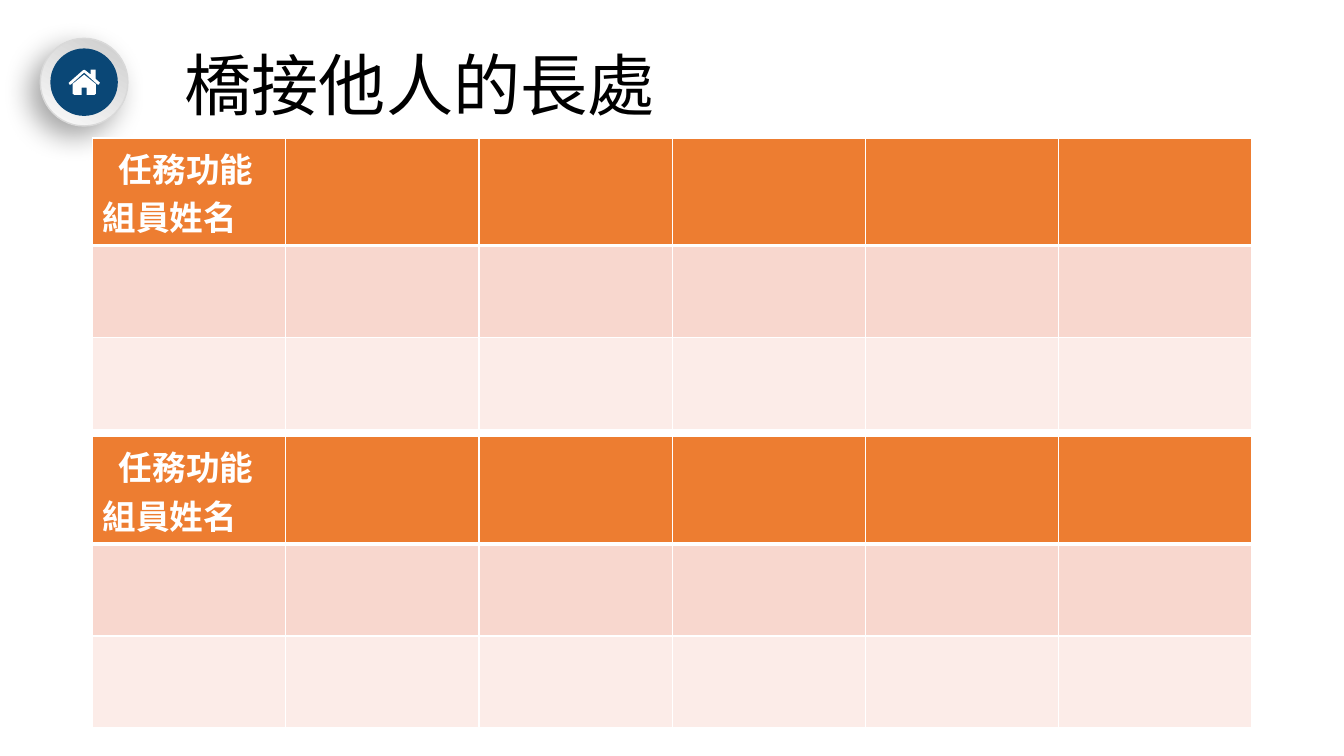
from lxml import etree
from pptx import Presentation
from pptx.dml.color import RGBColor
from pptx.enum.shapes import MSO_SHAPE
from pptx.enum.text import MSO_ANCHOR, MSO_AUTO_SIZE, PP_ALIGN
from pptx.oxml.ns import qn
from pptx.util import Pt

OVAL = MSO_SHAPE.OVAL
LEFT = PP_ALIGN.LEFT
MIDDLE = MSO_ANCHOR.MIDDLE
NO_AUTOFIT = MSO_AUTO_SIZE.NONE

FONT = "Noto Sans CJK SC"
WHITE = "FFFFFF"
ROW_FILLS = ["ED7D31", "F8D7CE", "FCECE8"]
ROW_HEIGHTS = [76.6, 65.6, 65.6]
COLUMN_COUNT = 6
HEADER_LINES = [("任務功能", 11.5), ("組員姓名", 0)]
TABLE_TOPS = [311.8, 98.6]

ROOF = [(706, 605), (698, 605), (601, 518), (505, 605), (497, 605),
        (490, 592), (590, 504), (601, 498), (612, 504), (648, 533),
        (648, 498), (683, 498), (683, 563), (713, 590)]
WALLS = [(684, 670), (676, 677), (619, 677), (619, 626), (583, 626),
         (583, 677), (530, 677), (518, 670), (518, 600), (601, 533),
         (684, 600)]


def color(value):
    """Turn a hex string into a colour."""
    return RGBColor.from_string(value)


def add_node(parent, tag, **attributes):
    """Append an XML child with the given attributes."""
    return etree.SubElement(parent, qn(tag), attributes)


class SlideBuilder:
    """Holds the style and the current slide."""

    def __init__(self, slide, font):
        """Keep the slide and the font name."""
        self.slide = slide
        self.font = font

    def add_run(self, paragraph, text, size, fill, bold=False):
        """Add one formatted run."""
        run = paragraph.add_run()
        run.text = text
        run.font.name = self.font
        run.font.size = Pt(size)
        run.font.bold = bold
        run.font.color.rgb = color(fill)
        add_node(run.font._element, "a:ea", typeface=self.font)

    def add_title(self, text, left, top, width, height):
        """Place and fill the title placeholder."""
        title = self.slide.shapes.title
        title.left, title.top = Pt(left), Pt(top)
        title.width, title.height = Pt(width), Pt(height)
        frame = title.text_frame
        frame.auto_size = NO_AUTOFIT
        frame.vertical_anchor = MIDDLE
        paragraph = frame.paragraphs[0]
        paragraph.alignment = LEFT
        paragraph.line_spacing = 0.9
        self.add_run(paragraph, text, 48, "000000")

    def add_disc(self, left, top, size):
        """Add a plain circle without a line or shadow."""
        disc = self.slide.shapes.add_shape(OVAL, Pt(left), Pt(top), Pt(size), Pt(size))
        disc.shadow.inherit = False
        disc.line.fill.background()
        return disc

    def add_ring(self, left, top, size):
        """Add the shaded circle with its soft shadow."""
        ring = self.add_disc(left, top, size)
        ring.fill.gradient()
        ring.fill.gradient_angle = 240
        for stop, value in zip(ring.fill.gradient_stops, ["CCCCCC", "FCFCFC"]):
            stop.color.rgb = color(value)
        ring.line.color.rgb = color("D9D9D9")
        ring.line.width = Pt(1)
        effects = ring._element.spPr.find(qn("a:effectLst"))
        shadow = add_node(effects, "a:outerShdw", blurRad=str(Pt(20)),
                          dist=str(Pt(10)), dir=str(136 * 60000),
                          algn="ctr", rotWithShape="0")
        shade = add_node(shadow, "a:srgbClr", val="000000")
        add_node(shade, "a:alpha", val="34000")

    def add_outline(self, contours, fill):
        """Add a freeform from closed contours in tenths of a point."""
        builder = self.slide.shapes.build_freeform(*contours[0][0], scale=Pt(0.1))
        builder.add_line_segments(contours[0][1:], close=True)
        for contour in contours[1:]:
            builder.move_to(*contour[0])
            builder.add_line_segments(contour[1:], close=True)
        shape = builder.convert_to_shape()
        shape.shadow.inherit = False
        shape.fill.solid()
        shape.fill.fore_color.rgb = color(fill)
        shape.line.fill.background()

    def format_cell(self, cell, fill, top_width, bottom_width):
        """Set the borders and fill of a cell."""
        properties = cell._tc.get_or_add_tcPr()
        widths = {"a:lnL": 1, "a:lnR": 1, "a:lnT": top_width, "a:lnB": bottom_width}
        for tag, width in widths.items():
            border = add_node(properties, tag, w=str(Pt(width)))
            add_node(add_node(border, "a:solidFill"), "a:srgbClr", val=WHITE)
        cell.fill.solid()
        cell.fill.fore_color.rgb = color(fill)

    def add_table(self, left, top, width):
        """Add a task table with its header label."""
        frame = self.slide.shapes.add_table(
            len(ROW_HEIGHTS), COLUMN_COUNT, Pt(left), Pt(top),
            Pt(width), Pt(sum(ROW_HEIGHTS)))
        table = frame.table
        for column in table.columns:
            column.width = Pt(width / COLUMN_COUNT)
        for index, row in enumerate(table.rows):
            row.height = Pt(ROW_HEIGHTS[index])
            for cell in row.cells:
                self.format_cell(cell, ROW_FILLS[index],
                                 3 if index == 1 else 1, 3 if index == 0 else 1)
        text_frame = table.cell(0, 0).text_frame
        for index, (text, indent) in enumerate(HEADER_LINES):
            paragraph = text_frame.add_paragraph() if index else text_frame.paragraphs[0]
            paragraph._p.get_or_add_pPr().set("marL", str(Pt(indent)))
            self.add_run(paragraph, text, 24, WHITE, bold=True)


def main():
    """Build and save the slide."""
    presentation = Presentation()
    presentation.slide_width, presentation.slide_height = Pt(960), Pt(540)
    slide = presentation.slides.add_slide(presentation.slide_layouts[5])
    builder = SlideBuilder(slide, FONT)
    builder.add_ring(28.8, 27.4, 62.6)
    hub = builder.add_disc(36, 34.6, 48.2)
    hub.fill.solid()
    hub.fill.fore_color.rgb = color("0A4776")
    builder.add_outline([ROOF, WALLS], WHITE)
    builder.add_title("橋接他人的長處", 124.6, 28.8, 769.7, 69.8)
    for top in TABLE_TOPS:
        builder.add_table(66.2, top, 828)
    presentation.save("out.pptx")


if __name__ == "__main__":
    main()
